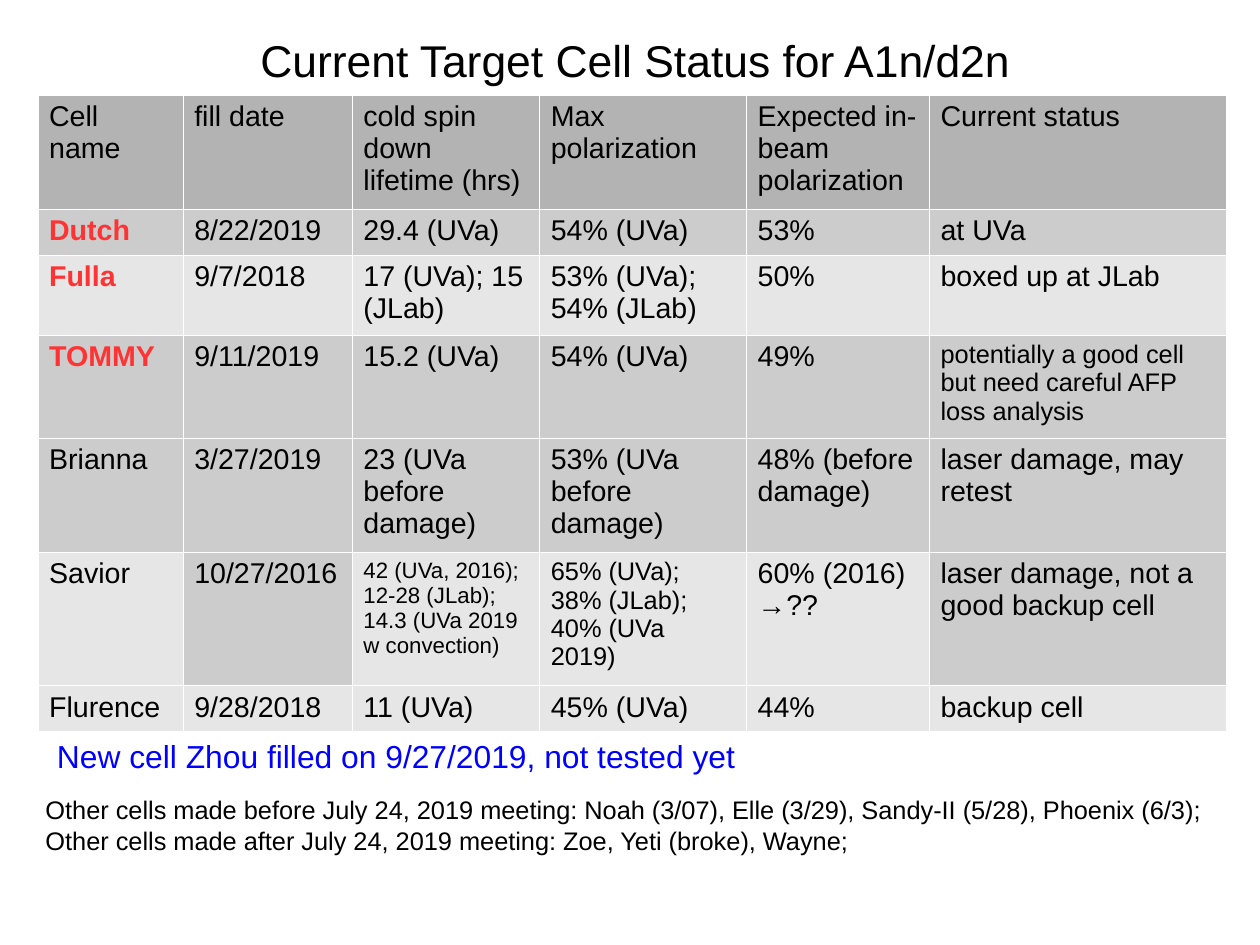
from lxml import etree
from pptx import Presentation
from pptx.dml.color import RGBColor
from pptx.enum.text import MSO_ANCHOR, PP_ALIGN
from pptx.oxml.ns import qn
from pptx.util import Cm, Inches, Pt

CENTER, LEFT = PP_ALIGN.CENTER, PP_ALIGN.LEFT
MIDDLE, TOP = MSO_ANCHOR.MIDDLE, MSO_ANCHOR.TOP

FONT = "Arial"
SLIDE_WIDTH, SLIDE_HEIGHT = Cm(28), Cm(21)
COLORS = {
    "text": "000000",
    "ready": "FF3333",
    "news": "0000FF",
    "header": "B3B3B3",
    "dark": "CCCCCC",
    "light": "E6E6E6",
    "border": "FFFFFF",
}

# Relative column widths and row heights of the status table
COLUMN_SHARES = [1.27, 1.48, 1.64, 1.81, 1.6, 2.6]
ROW_SHARES = [0.94, 0.38, 0.66, 0.84, 0.94, 1.05, 0.38]

# Row shade followed by the cell texts
STATUS_ROWS = [
    ("header", ["Cell name", "fill date", "cold spin down lifetime (hrs)",
                "Max polarization", "Expected in-beam polarization", "Current status"]),
    ("dark", ["Dutch", "8/22/2019", "29.4 (UVa)", "54% (UVa)", "53%", "at UVa"]),
    ("light", ["Fulla", "9/7/2018", "17 (UVa); 15 (JLab)",
               "53% (UVa); 54% (JLab)", "50%", "boxed up at JLab"]),
    ("dark", ["TOMMY", "9/11/2019", "15.2 (UVa)", "54% (UVa)", "49%",
              "potentially a good cell but need careful AFP loss analysis"]),
    ("dark", ["Brianna", "3/27/2019", "23 (UVa before damage)",
              "53% (UVa before damage)", "48% (before damage)",
              "laser damage, may retest"]),
    ("light", ["Savior", "10/27/2016",
               "42 (UVa, 2016); 12-28 (JLab); 14.3 (UVa 2019 w convection)",
               "65% (UVa); 38% (JLab); 40% (UVa 2019)", "60% (2016) →??",
               "laser damage, not a good backup cell"]),
    ("light", ["Flurence", "9/28/2018", "11 (UVa)", "45% (UVa)", "44%", "backup cell"]),
]
READY_CELLS = {"Dutch", "Fulla", "TOMMY"}
# Exceptions, keyed by (row, column)
SMALL_TEXT = {(3, 5): 16, (5, 2): 14, (5, 3): 16}
SHADE_CHANGES = {(5, 1): "dark", (5, 5): "dark"}


def rgb(name):
    return RGBColor.from_string(COLORS[name])


def style_font(font, size, color="text", bold=False):
    font.name, font.size, font.bold = FONT, Pt(size), bold
    font.color.rgb = rgb(color)


def add_text(slide, box, lines, size, color="text", align=LEFT, anchor=TOP, inset=(0.1, 0.05)):
    frame = slide.shapes.add_textbox(*map(Inches, box)).text_frame
    frame.word_wrap = True
    frame.vertical_anchor = anchor
    frame.margin_left = frame.margin_right = Inches(inset[0])
    frame.margin_top = frame.margin_bottom = Inches(inset[1])
    for index, line in enumerate(lines):
        paragraph = frame.add_paragraph() if index else frame.paragraphs[0]
        paragraph.text = line
        paragraph.alignment = align
        style_font(paragraph.font, size, color)


def add_borders(cell):
    properties = cell._tc.get_or_add_tcPr()
    for position, side in enumerate(("lnL", "lnR", "lnT", "lnB")):
        line = etree.Element(qn(f"a:{side}"), w=str(Pt(0.06)))
        fill = etree.SubElement(line, qn("a:solidFill"))
        etree.SubElement(fill, qn("a:srgbClr"), val=COLORS["border"])
        properties.insert(position, line)


def add_status_table(slide, box):
    left, top, width, height = box
    shape = slide.shapes.add_table(len(ROW_SHARES), len(COLUMN_SHARES), *map(Inches, box))
    table = shape.table
    for column, share in zip(table.columns, COLUMN_SHARES):
        column.width = Inches(width * share / sum(COLUMN_SHARES))
    for row, share in zip(table.rows, ROW_SHARES):
        row.height = Inches(height * share / sum(ROW_SHARES))

    for row_index, (shade, texts) in enumerate(STATUS_ROWS):
        for column_index, text in enumerate(texts):
            place = (row_index, column_index)
            cell = table.cell(*place)
            cell.text = text
            cell.margin_left = cell.margin_right = Inches(0.1)
            cell.margin_top = cell.margin_bottom = Inches(0.05)
            cell.fill.solid()
            cell.fill.fore_color.rgb = rgb(SHADE_CHANGES.get(place, shade))
            add_borders(cell)
            # Row heights are fitted to run fonts, so the font goes on the run
            ready = text in READY_CELLS
            style_font(cell.text_frame.paragraphs[0].runs[0].font,
                       SMALL_TEXT.get(place, 18), "ready" if ready else "text", ready)


def add_notes_below(slide, box):
    left, top, width, height = box
    # Other cells
    add_text(slide, (left, top + 0.5, width, height - 0.5), [
        "Other cells made before July 24, 2019 meeting: Noah (3/07), Elle (3/29), "
        "Sandy-II (5/28), Phoenix (6/3);",
        "Other cells made after July 24, 2019 meeting: Zoe, Yeti (broke), Wayne;",
    ], 16)
    # Newest cell
    add_text(slide, (left + 0.1, top, 9.6, 0.72),
             ["New cell Zhou filled on 9/27/2019, not tested yet"], 20, "news")


def main():
    presentation = Presentation()
    presentation.slide_width = SLIDE_WIDTH
    presentation.slide_height = SLIDE_HEIGHT
    slide = presentation.slides.add_slide(presentation.slide_layouts[6])

    # Title
    add_text(slide, (0.31, 0.2, 10.49, 0.65), ["Current Target Cell Status for A1n/d2n"],
             28, align=CENTER, anchor=MIDDLE, inset=(0, 0))
    # Table and notes
    add_status_table(slide, (0.33, 0.83, 10.4, 5.19))
    add_notes_below(slide, (0.3, 6.4, 10.53, 1.2))
    presentation.save("out.pptx")


if __name__ == "__main__":
    main()
